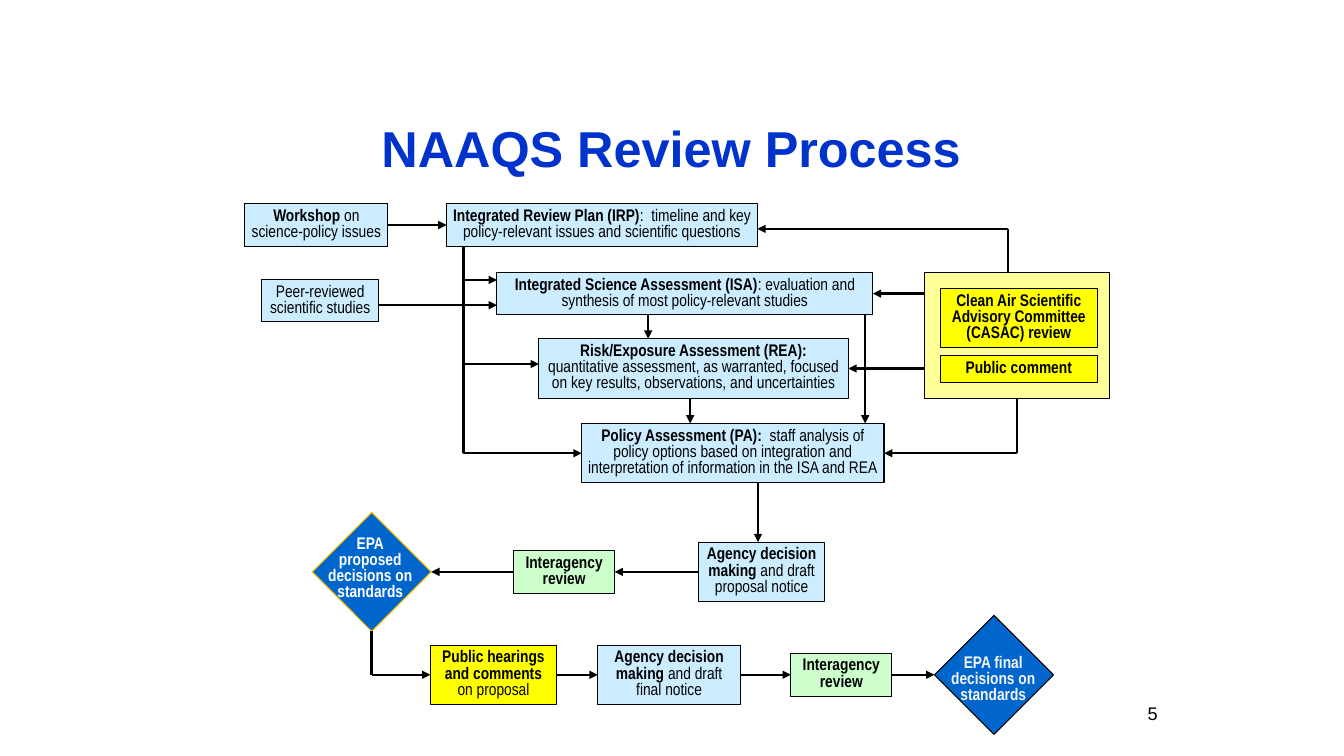
from collections import namedtuple

from lxml.etree import SubElement
from pptx import Presentation
from pptx.dml.color import RGBColor
from pptx.enum.shapes import MSO_CONNECTOR, MSO_SHAPE
from pptx.enum.text import MSO_ANCHOR, PP_ALIGN
from pptx.oxml.ns import qn
from pptx.util import Pt

Box = namedtuple("Box", "left top width height")

BLACK, BLUE, AQUA = "000000", "0066CC", "CCECFF"
YELLOW, PALE_YELLOW, GREEN = "FFFF00", "FFFF99", "CCFFCC"
TOP, LEFT, BOTTOM, RIGHT = range(4)
TWO_LINES, THREE_LINES = 30.5, 42.5
DIAMOND = 85


def paint(target, color):
    target.rgb = RGBColor.from_string(color)


def inside(box, left, top, width, height):
    """Give a box whose place is measured from the corner of another."""
    return Box(box.left + left, box.top + top, width, height)


def box_of(shape):
    """Give the box of a shape in points."""
    return Box(shape.left.pt, shape.top.pt, shape.width.pt, shape.height.pt)


def write(shape, paragraphs, size=12, font="Arial Narrow", color=BLACK,
          align=PP_ALIGN.CENTER, spacing=0.8, inset=7.2):
    """Fill a shape with paragraphs, each a pair of bold and plain text."""
    frame = shape.text_frame
    frame.word_wrap = True
    frame.vertical_anchor = MSO_ANCHOR.TOP
    frame.margin_left = frame.margin_right = Pt(inset)
    frame.margin_top = frame.margin_bottom = Pt(3.6)
    for index, (strong, plain) in enumerate(paragraphs):
        para = frame.add_paragraph() if index else frame.paragraphs[0]
        para.alignment = align
        para.line_spacing = spacing
        para.font.size = Pt(size)
        para.font.name = font
        paint(para.font.color, color)
        for text, bold in ((strong, True), (plain, False)):
            if text:
                span = para.add_run()
                span.text = text
                span.font.bold = bold


def add_text(page, box, paragraphs, **style):
    write(page.shapes.add_textbox(*map(Pt, box)), paragraphs, **style)


def add_outlined(page, box, fill, kind=MSO_SHAPE.RECTANGLE, line=BLACK):
    shape = page.shapes.add_shape(kind, *map(Pt, box))
    shape.shadow.inherit = False
    shape.fill.solid()
    paint(shape.fill.fore_color, fill)
    paint(shape.line.color, line)
    shape.line.width = Pt(0.75)
    return shape


def add_step(page, box, fill, strong, plain="", inset=3.6):
    shape = add_outlined(page, box, fill)
    write(shape, [(strong, plain)], inset=inset)
    return shape


def link(page, start, finish, arrow=True):
    """Draw a line between two ends, each a point or a (shape, side) pair."""
    line = page.shapes.add_connector(MSO_CONNECTOR.STRAIGHT, 0, 0, 0, 0)
    if isinstance(start[0], (int, float)):
        line.begin_x, line.begin_y = map(Pt, start)
    else:
        line.begin_connect(*start)
    if isinstance(finish[0], (int, float)):
        line.end_x, line.end_y = map(Pt, finish)
    else:
        line.end_connect(*finish)
    paint(line.line.color, BLACK)
    line.line.width = Pt(1.75)
    properties = line._element.spPr
    if arrow:
        SubElement(properties.find(qn("a:ln")), qn("a:tailEnd"), type="triangle")
    SubElement(properties, qn("a:effectLst"))


def draw_assessments(page, box):
    """Draw the inputs and the four documents; return the documents."""
    workshop = add_step(page, inside(box, 0, 0, 102, TWO_LINES), AQUA,
                        "Workshop", " on science-policy issues")
    add_step(page, inside(box, 12, 54, 83.5, TWO_LINES), AQUA,
             "", "Peer-reviewed scientific studies")
    plan = add_step(page, inside(box, 144, 0, 222, TWO_LINES), AQUA,
                    "Integrated Review Plan (IRP)",
                    ":  timeline and key policy-relevant issues and scientific questions",
                    inset=0.7)
    science = add_step(page, inside(box, 180, 49, 268.5, TWO_LINES), AQUA,
                       "Integrated Science Assessment (ISA)",
                       ": evaluation and synthesis of most policy-relevant studies")
    risk = add_step(page, inside(box, 210, 96.5, 221, THREE_LINES), AQUA,
                    "Risk/Exposure Assessment (REA):",
                    " quantitative assessment, as warranted, focused on key results, "
                    "observations, and uncertainties")
    policy = add_step(page, inside(box, 240.5, 157, 216, THREE_LINES), AQUA,
                      "Policy Assessment (PA):",
                      "  staff analysis of policy options based on integration and "
                      "interpretation of information in the ISA and REA", inset=1.4)

    link(page, (workshop, RIGHT), (plan, LEFT))
    trunk, policy_middle = box.left + 156, box.top + 157 + THREE_LINES / 2
    link(page, (trunk, box.top + TWO_LINES), (trunk, policy_middle), arrow=False)
    link(page, (trunk, policy_middle), (policy, LEFT))
    for left, right, y in ((156, 180, 54.5), (156, 210, 114.5), (95.5, 180, 72.5)):
        link(page, (box.left + left, box.top + y), (box.left + right, box.top + y))
    for x, upper, lower in ((288, 79.5, 96.5), (318, 139, 157), (443, 79.5, 157)):
        link(page, (box.left + x, box.top + upper), (box.left + x, box.top + lower))
    return plan, science, risk, policy


def draw_reviewers(page, box, documents):
    """Draw the review panel and its arrows to the documents."""
    panel = add_outlined(page, box, PALE_YELLOW)
    add_step(page, inside(box, 11, 11.5, 112.5, THREE_LINES), YELLOW,
             "Clean Air Scientific Advisory Committee (CASAC) review")
    add_step(page, inside(box, 11, 59.5, 112.5, 19), YELLOW, "Public comment")

    plan, science, risk, policy = documents
    plan_box, policy_box = box_of(plan), box_of(policy)
    corner = (box.left + 59.5, box.top - 31)
    link(page, (corner[0], box.top), corner, arrow=False)
    link(page, corner, (plan_box.left + plan_box.width, corner[1]))
    for document in (science, risk):
        place = box_of(document)
        link(page, (box.left, place.top + place.height / 2), (document, RIGHT))
    corner = (box.left + box.width / 2, policy_box.top + policy_box.height / 2)
    link(page, (panel, BOTTOM), corner, arrow=False)
    link(page, corner, (policy, RIGHT))


def draw_row(page, box, steps):
    """Draw (left, width, height, fill, strong, plain) steps on one centre line."""
    return [add_step(page, inside(box, left, (box.height - height) / 2, width, height),
                     fill, strong, plain)
            for left, width, height, fill, strong, plain in steps]


def draw_proposal(page, box, policy):
    """Draw the proposal row, read from right to left; return its decision."""
    agency, review = draw_row(page, box, (
        (276, 90, THREE_LINES, AQUA, "Agency decision making ", "and draft proposal notice"),
        (144, 72, 31, GREEN, "Interagency review", ""),
    ))
    decision = add_outlined(page, inside(box, 0, 0, DIAMOND, DIAMOND), BLUE,
                            MSO_SHAPE.DIAMOND, "FFC000")
    add_text(page, inside(box, -7.5, 13.5, 98, 54),
             [("EPA", ""), ("proposed decisions on standards", "")], color="FFFFFF")
    notice_x, policy_box = box.left + 318.5, box_of(policy)
    link(page, (notice_x, policy_box.top + policy_box.height),
         (notice_x, box_of(agency).top))
    link(page, (agency, LEFT), (review, RIGHT))
    link(page, (review, LEFT), (decision, RIGHT))
    return decision


def draw_final(page, box, proposal):
    """Draw the final row, read from left to right."""
    steps = draw_row(page, box, (
        (0, 90, THREE_LINES, YELLOW, "Public hearings and comments ", "on proposal"),
        (119.5, 102, THREE_LINES, AQUA, "Agency decision making ", "and draft final notice"),
        (257.5, 72, 31, GREEN, "Interagency review", ""),
    ))
    steps.append(add_outlined(page, inside(box, 360, 0, DIAMOND, DIAMOND), BLUE,
                              MSO_SHAPE.DIAMOND))
    add_text(page, inside(box, 360, 25, 84, THREE_LINES),
             [("EPA final decisions on standards", "")], color="F4F4F4")
    proposal_box = box_of(proposal)
    corner = (proposal_box.left + proposal_box.width / 2, box.top + box.height / 2)
    link(page, (proposal, BOTTOM), corner, arrow=False)
    link(page, corner, (steps[0], LEFT))
    for before, after in zip(steps, steps[1:]):
        link(page, (before, RIGHT), (after, LEFT))


def main():
    deck = Presentation()
    deck.slide_width, deck.slide_height = Pt(960), Pt(540)
    page = deck.slides.add_slide(deck.slide_layouts[6])
    add_text(page, Box(119.5, 80, 720, 51), [("NAAQS Review Process", "")],
             size=36, font="Arial", color="0033CC", spacing=1)
    documents = draw_assessments(page, Box(175, 145.5, 457, 200))
    draw_reviewers(page, Box(660.5, 194.5, 132, 90), documents)
    proposal = draw_proposal(page, Box(223, 366, 366, DIAMOND), documents[-1])
    draw_final(page, Box(307.5, 439.5, 445, DIAMOND), proposal)
    add_text(page, Box(684, 498, 150, 36), [("", "5")], size=13, font="Arial",
             align=PP_ALIGN.RIGHT, spacing=1)
    deck.save("out.pptx")


if __name__ == "__main__":
    main()
